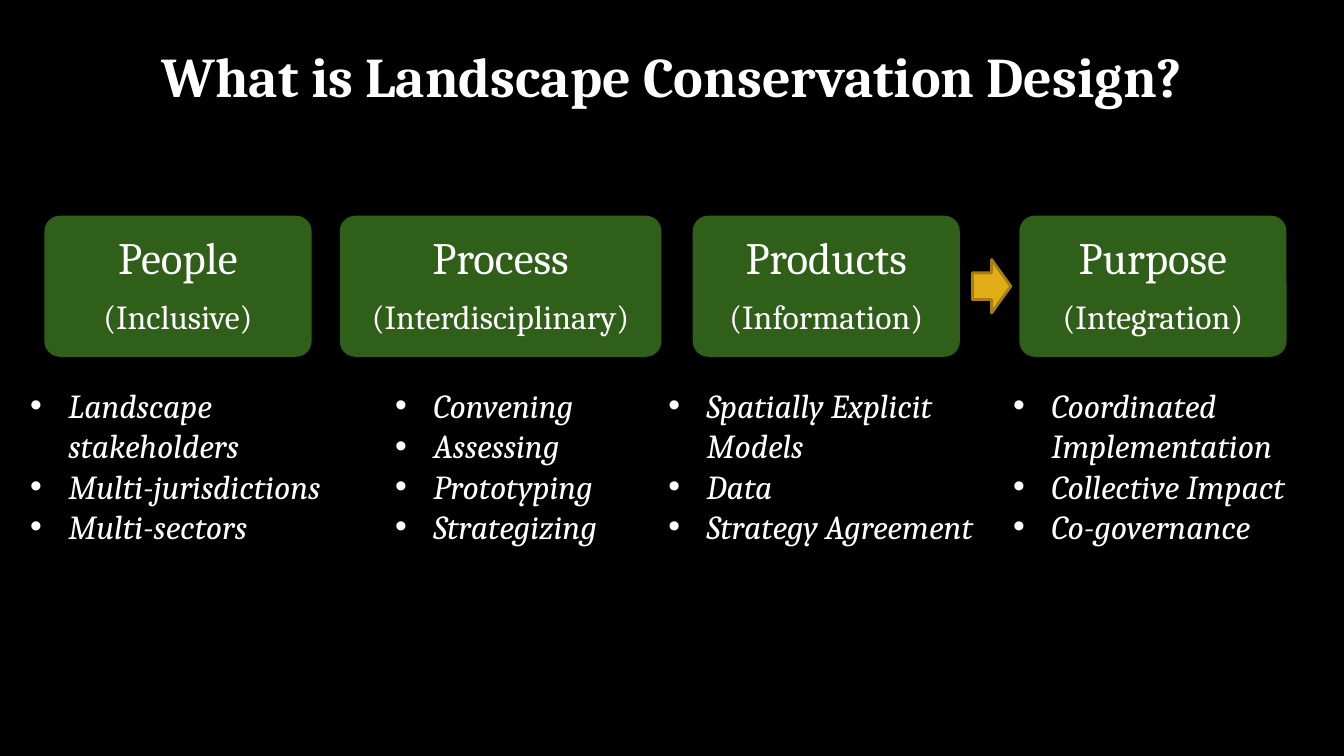
from lxml.etree import SubElement
from pptx import Presentation
from pptx.dml.color import RGBColor
from pptx.enum.shapes import MSO_SHAPE
from pptx.enum.text import MSO_ANCHOR, MSO_AUTO_SIZE, PP_ALIGN
from pptx.oxml.ns import qn
from pptx.util import Inches, Pt

TITLE = "What is Landscape Conservation Design?"
PILLARS = [
    {"name": "People", "quality": "(Inclusive)", "card": (0.44, 2.65), "list": (0.2, 3.3),
     "points": ["Landscape stakeholders", "Multi-jurisdictions", "Multi-sectors"]},
    {"name": "Process", "quality": "(Interdisciplinary)", "card": (3.37, 3.19), "list": (3.82, 2.32),
     "points": ["Convening", "Assessing", "Prototyping", "Strategizing"]},
    {"name": "Products", "quality": "(Information)", "card": (6.87, 2.65), "list": (6.53, 3.38),
     "points": ["Spatially Explicit Models", "Data", "Strategy Agreement"]},
    {"name": "Purpose", "quality": "(Integration)", "card": (10.11, 2.65), "list": (9.95, 3.01),
     "points": ["Coordinated Implementation", "Collective Impact", "Co-governance"]},
]
FONT = "Cambria"
BLACK, WHITE, GREEN, GOLD, BRONZE = "000000", "FFFFFF", "305F19", "E1AC16", "A67F10"
SLIDE_W, SLIDE_H = 13.33, 7.5
CARD_TOP, CARD_H = 2.14, 1.4
LIST_TOP, LIST_H = 3.77, 1.72
ARROW_W, ARROW_H = 0.38, 0.53
BULLET_INDENT = 0.38


def rgb(hex_color):
    """Turn a hex string into a colour."""
    return RGBColor.from_string(hex_color)


def inches(*lengths):
    """Turn plain numbers into slide lengths."""
    return [Inches(length) for length in lengths]


def write(frame, lines, sizes, bold=False, italic=False, align=PP_ALIGN.LEFT,
          anchor=MSO_ANCHOR.TOP, spacing=None, after=0, inset=None, bullet=False):
    """Fill a text frame with one formatted paragraph per line."""
    frame.word_wrap = True
    frame.vertical_anchor = anchor
    if inset is not None:
        frame.margin_left = frame.margin_right = Inches(inset)
        frame.margin_top = frame.margin_bottom = Inches(inset)
    for index, (line, size) in enumerate(zip(lines, sizes)):
        paragraph = frame.add_paragraph() if index else frame.paragraphs[0]
        paragraph.alignment = align
        paragraph.line_spacing = spacing
        paragraph.space_after = Pt(after * size)
        run = paragraph.add_run()
        run.text = line
        run.font.name, run.font.size = FONT, Pt(size)
        run.font.bold, run.font.italic = bold, italic
        run.font.color.rgb = rgb(WHITE)
        if bullet:
            properties = paragraph._p.get_or_add_pPr()
            properties.set("marL", str(Inches(BULLET_INDENT)))
            properties.set("indent", str(-Inches(BULLET_INDENT)))
            SubElement(properties, qn("a:buFont"), typeface="Arial")
            SubElement(properties, qn("a:buChar"), char="•")


def add_block(slide, preset, box, fill, line=None):
    """Add a flat preset shape."""
    block = slide.shapes.add_shape(preset, *inches(*box))
    block.shadow.inherit = False
    block.fill.solid()
    block.fill.fore_color.rgb = rgb(fill)
    if line:
        block.line.color.rgb = rgb(line)
        block.line.width = Pt(2)
    else:
        block.line.fill.background()
    return block


def add_pillar(slide, pillar):
    """Add a heading card and the bullet list below it."""
    left, width = pillar["card"]
    card = add_block(slide, MSO_SHAPE.ROUNDED_RECTANGLE, (left, CARD_TOP, width, CARD_H), GREEN)
    card.adjustments[0] = 0.11
    write(card.text_frame, [pillar["name"], pillar["quality"]], [32, 24], align=PP_ALIGN.CENTER,
          anchor=MSO_ANCHOR.MIDDLE, spacing=0.9, after=0.35, inset=0.27)
    left, width = pillar["list"]
    points = slide.shapes.add_textbox(*inches(left, LIST_TOP, width, LIST_H)).text_frame
    write(points, pillar["points"], [24] * len(pillar["points"]), italic=True, bullet=True)
    points.auto_size = MSO_AUTO_SIZE.SHAPE_TO_FIT_TEXT


def main():
    """Build the slide and save it."""
    deck = Presentation()
    deck.slide_width, deck.slide_height = inches(SLIDE_W, SLIDE_H)
    slide = deck.slides.add_slide(deck.slide_layouts[5])
    slide.background.fill.solid()
    slide.background.fill.fore_color.rgb = rgb(BLACK)

    title = slide.shapes.title
    title.left, title.top, title.width, title.height = inches(0, 0.37, SLIDE_W, 0.81)
    write(title.text_frame, [TITLE], [40], bold=True, align=PP_ALIGN.CENTER,
          anchor=MSO_ANCHOR.BOTTOM, spacing=0.85, inset=0.1)

    for pillar in PILLARS:
        add_pillar(slide, pillar)

    products_left, products_width = PILLARS[-2]["card"]
    gap_middle = (products_left + products_width + PILLARS[-1]["card"][0]) / 2
    arrow_left = gap_middle + 0.02 - ARROW_W / 2
    arrow_top = CARD_TOP + (CARD_H - ARROW_H) / 2
    add_block(slide, MSO_SHAPE.RIGHT_ARROW, (arrow_left, arrow_top, ARROW_W, ARROW_H), GOLD, BRONZE)
    deck.save("out.pptx")


if __name__ == "__main__":
    main()
